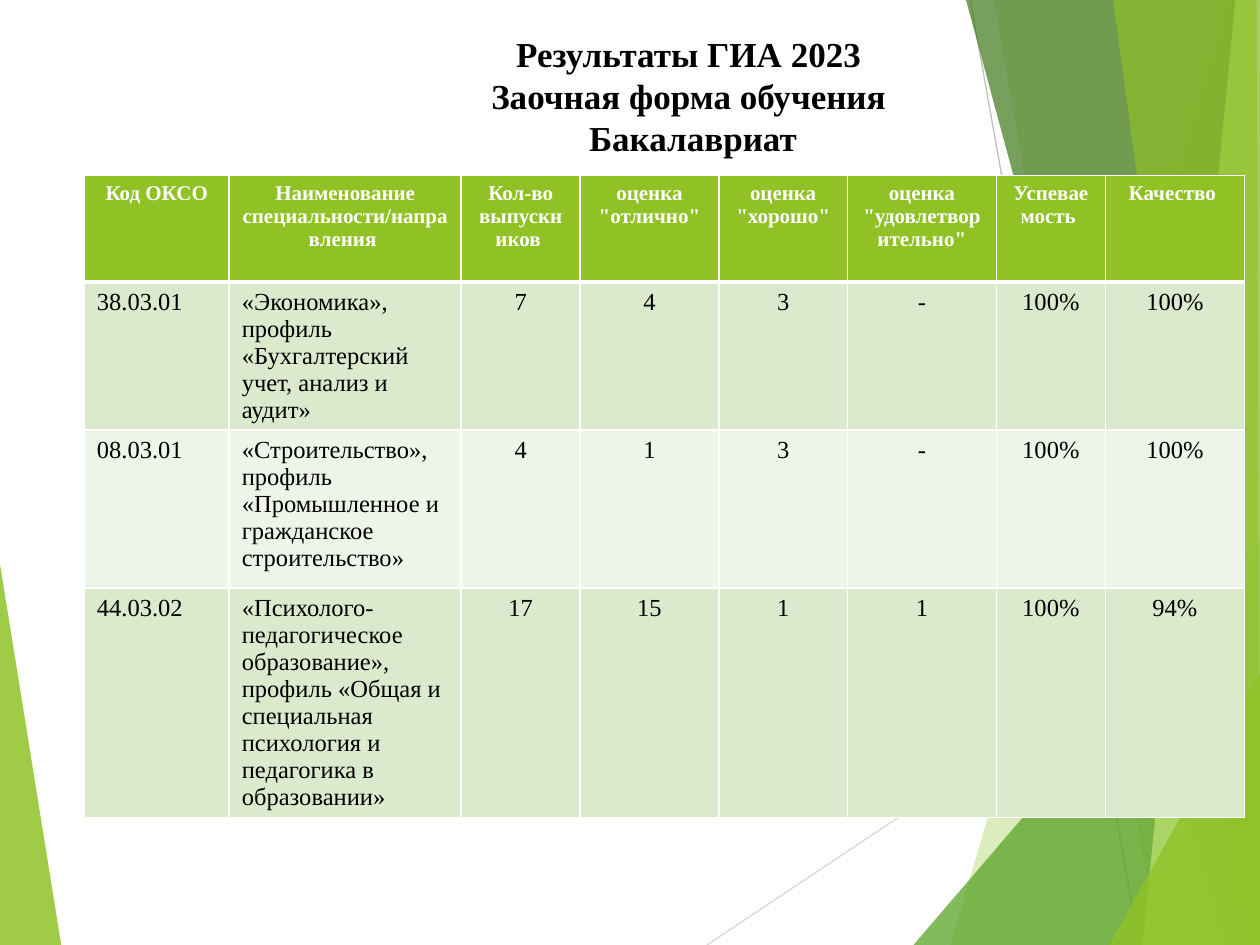
from dataclasses import dataclass

from lxml.etree import SubElement
from pptx import Presentation
from pptx.dml.color import RGBColor as Rgb
from pptx.enum.text import MSO_ANCHOR as Anchor, MSO_AUTO_SIZE as Fit, PP_ALIGN as Align
from pptx.oxml.ns import qn
from pptx.util import Pt


@dataclass(frozen=True)
class Theme:
    font: str = "Times New Roman"
    title: int = 20
    head: int = 12
    body: int = 14
    black: str = "000000"
    white: str = "FFFFFF"
    lime: str = "90C226"
    leaf: str = "54A021"
    moss: str = "3F7819"
    pale: str = "C0E474"
    bands: tuple = ("DBE9CD", "EEF4E8")
    rays: tuple = ("D9D9D9", "BFBFBF")


THEME = Theme()

# Outline, colour and opacity in percent, from back to front
BLADE = ([(-1, 316), (35.3, 540.5), (-1, 540)], THEME.lime, 85)
RAYS = [(404, 540, 720.5, 329), (554.5, 0, 651, 540)]
FACETS = [
    ([(702, 0), (543, 540), (721, 540.5), (720.5, 0)], THEME.lime, 30),
    ([(567.5, -0.5), (661.5, 540), (720.5, 540), (720.5, -0.5)], THEME.lime, 20),
    ([(522.5, 540), (720, 309), (720.5, 540)], THEME.leaf, 72),
    ([(552, -0.5), (698.5, 540), (720.5, 539.5), (720.5, -0.5)], THEME.moss, 70),
    ([(706.5, -0.5), (653, 540), (720.5, 540), (720, -0.5)], THEME.pale, 70),
    ([(636, -0.5), (710, 540), (720, 540), (718.5, -0.5)], THEME.lime, 65),
    ([(634.5, 540), (720.5, 385), (720.5, 539.5)], THEME.lime, 80),
]

TITLE = "Результаты ГИА 2023 \vЗаочная форма обучения \vБакалавриат"
WIDTHS = [82.8, 132.6, 68, 79.2, 73.6, 85, 62.4, 79.4]
HEIGHTS = [61, 84.5, 90.3, 131.2]
ROWS = [
    ["Код ОКСО", "Наименование специальности/направления ", "Кол-во выпускников ",
     'оценка "отлично"', 'оценка "хорошо"', 'оценка "удовлетворительно"',
     "Успеваемость ", "Качество "],
    ["38.03.01", "«Экономика», профиль «Бухгалтерский учет, анализ и аудит»",
     "7", "4", "3", "-", "100%", "100%"],
    ["08.03.01", "«Строительство», профиль \n«Промышленное и гражданское строительство»",
     "4", "1", "3", "-", "100%", "100%"],
    ["44.03.02", "«Психолого-педагогическое образование», профиль «Общая и "
     "специальная психология и педагогика в образовании»",
     "17", "15", "1", "1", "100%", "94%"],
]


def paint(fill, color):
    fill.solid()
    fill.fore_color.rgb = Rgb.from_string(color)


def style(frame, size, color, bold, align):
    for para in frame.paragraphs:
        para.alignment = align
        for run in para.runs:
            font = run.font
            font.name, font.size, font.bold = THEME.font, Pt(size), bold
            font.color.rgb = Rgb.from_string(color)


def add_facet(shapes, points, color, alpha):
    """Draw a borderless, see-through polygon."""
    pen = shapes.build_freeform(*points[0], scale=Pt(1))
    pen.add_line_segments(points[1:], close=True)
    shape = pen.convert_to_shape()
    shape.shadow.inherit = False
    shape.line.fill.background()
    paint(shape.fill, color)
    tone = shape.fill._xPr.find(".//" + qn("a:srgbClr"))
    SubElement(tone, qn("a:alpha"), val=str(alpha * 1000))


def add_ray(shapes, ends, color):
    ray = shapes.add_connector(1, *map(Pt, ends))
    ray.line.width = Pt(0.75)
    ray.line.color.rgb = Rgb.from_string(color)
    SubElement(ray._element.spPr, qn("a:effectLst"))


def set_title(shapes):
    title = shapes.title
    title.left, title.top, title.width, title.height = Pt(72), Pt(15), Pt(648), Pt(101.5)
    frame = title.text_frame
    frame.text = TITLE
    frame.word_wrap, frame.auto_size = True, Fit.NONE
    frame.vertical_anchor = Anchor.TOP
    style(frame, THEME.title, THEME.black, True, Align.CENTER)
    shapes._spTree.append(title._element)  # in front of the facets


def add_edges(cell, foot):
    """Give a cell white borders; foot is the width of the bottom one."""
    props = cell._tc.get_or_add_tcPr()
    for i, (side, width) in enumerate([("L", 1), ("R", 1), ("T", 1), ("B", foot)]):
        edge = props.makeelement(qn("a:ln" + side), {"w": str(Pt(width))})
        fill = SubElement(edge, qn("a:solidFill"))
        SubElement(fill, qn("a:srgbClr"), val=THEME.white)
        props.insert(i, edge)


def fill_cell(cell, text, row, col):
    head = row == 0
    cell.text_frame.text = text
    align = Align.LEFT if col < 2 and not head else Align.CENTER
    size, color = (THEME.head, THEME.white) if head else (THEME.body, THEME.black)
    style(cell.text_frame, size, color, head, align)
    paint(cell.fill, THEME.lime if head else THEME.bands[(row - 1) % 2])
    add_edges(cell, 3 if head else 1)


def add_results(shapes):
    frame = shapes.add_table(len(ROWS), len(WIDTHS), Pt(48.2), Pt(100.2),
                             Pt(sum(WIDTHS)), Pt(sum(HEIGHTS)))
    table = frame.table
    for col, width in zip(table.columns, WIDTHS):
        col.width = Pt(width)
    for row, height in zip(table.rows, HEIGHTS):
        row.height = Pt(height)
    for r, texts in enumerate(ROWS):
        for c, text in enumerate(texts):
            fill_cell(table.cell(r, c), text, r, c)


def main():
    deck = Presentation()
    deck.slide_width, deck.slide_height = Pt(720), Pt(540)
    shapes = deck.slides.add_slide(deck.slide_layouts[5]).shapes
    add_facet(shapes, *BLADE)
    for ends, color in zip(RAYS, THEME.rays):
        add_ray(shapes, ends, color)
    for facet in FACETS:
        add_facet(shapes, *facet)
    set_title(shapes)
    add_results(shapes)
    deck.save("out.pptx")


if __name__ == "__main__":
    main()
